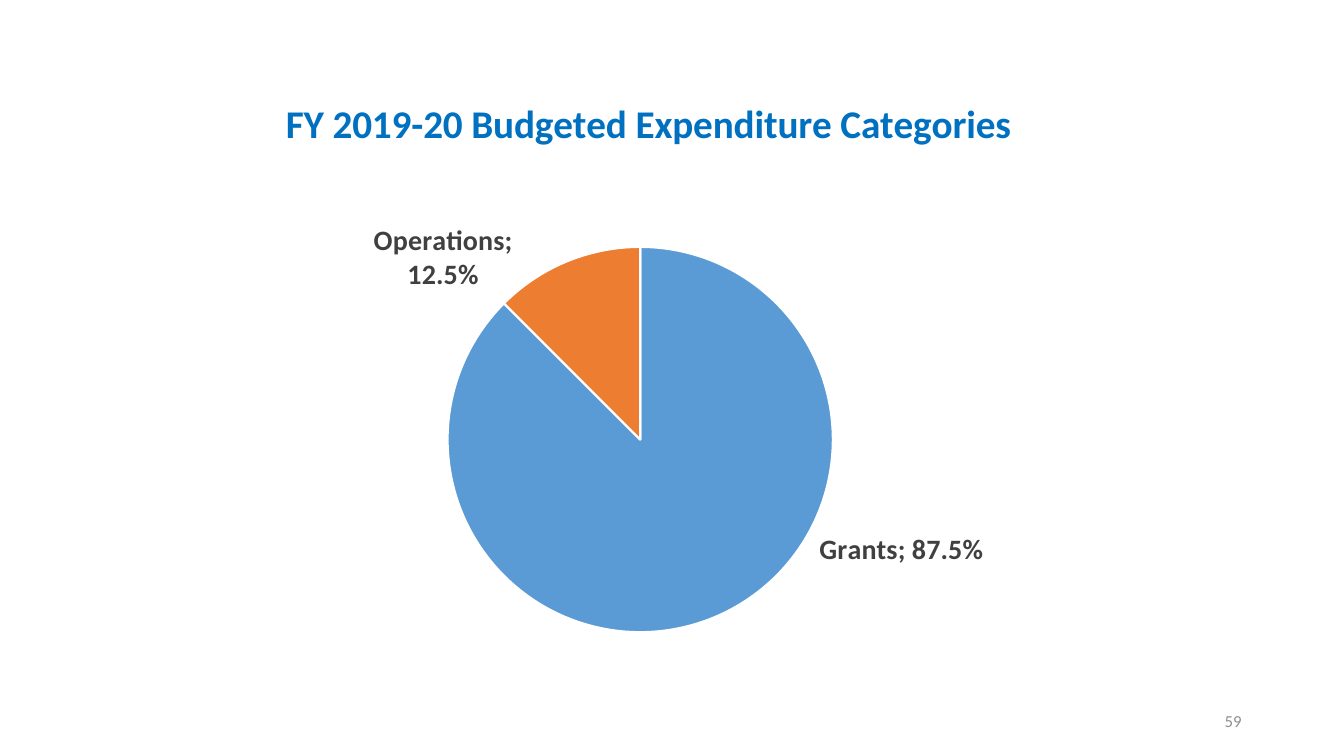
from lxml import etree
from pptx import Presentation
from pptx.chart.data import CategoryChartData
from pptx.dml.color import RGBColor
from pptx.enum import chart as ch, text
from pptx.oxml import parse_xml
from pptx.oxml.ns import nsdecls, qn
from pptx.util import Pt

FONT = "Calibri"
TITLE = "FY 2019-20 Budgeted Expenditure Categories"
# category, share, slice colour, label shift as fractions of the chart
SLICES = [
    ("Grants", 0.875, "5B9BD5", (0.1, -0.15)),
    ("Operations", 0.125, "ED7D31", (-0.05, 0.06)),
]


def rgb(value):
    return RGBColor.from_string(value)


def set_font(font, size, color, bold=False):
    font.name, font.size, font.bold = FONT, Pt(size), bold
    font.color.rgb = rgb(color)


def manual_layout(**values):
    """Return a c:layout element; keyword order follows the schema."""
    tags = "".join(f'<c:{k} val="{v}"/>' for k, v in values.items())
    return parse_xml(f'<c:layout {nsdecls("c")}><c:manualLayout>{tags}'
                     '</c:manualLayout></c:layout>')


def place_title(chart):
    tf = chart.chart_title.text_frame
    tf.text = TITLE
    set_font(tf.paragraphs[0].runs[0].font, 28, "0070C0", True)
    title = chart._chartSpace.chart.find(qn("c:title"))
    for old in title.findall(qn("c:layout")):
        title.remove(old)
    title.find(qn("c:tx")).addnext(
        manual_layout(xMode="edge", yMode="edge", x=0.14, y=0.02))
    chart.chart_title.include_in_layout = False


def place_plot(chart):
    area = chart._chartSpace.chart.plotArea
    for old in area.findall(qn("c:layout")):
        area.remove(old)
    area.insert(0, manual_layout(layoutTarget="inner", xMode="edge",
                                 yMode="edge", x=0.3, y=0.28, w=0.38, h=0.64))


def format_labels(series):
    labels = series.data_labels
    labels.show_value = labels.show_category_name = True
    labels.number_format, labels.number_format_is_linked = "0.0%", False
    labels.position = ch.XL_LABEL_POSITION.OUTSIDE_END
    set_font(labels.font, 20, "404040", True)
    dlbls = labels._element
    leader = dlbls.find(qn("c:showLeaderLines"))
    if leader is None:
        leader = etree.SubElement(dlbls, qn("c:showLeaderLines"))
    leader.set("val", "0")


def format_slice(series, index, color, shift):
    point = series.points[index]
    point.format.fill.solid()
    point.format.fill.fore_color.rgb = rgb(color)
    point.format.line.color.rgb = rgb("FFFFFF")
    point.format.line.width = Pt(1.5)

    label = point.data_label
    set_font(label.font, 20, "404040", True)
    label.position = ch.XL_LABEL_POSITION.OUTSIDE_END
    dlbl = series._element.xpath(f"c:dLbls/c:dLbl[c:idx/@val={index}]")[0]
    layout = manual_layout(x=shift[0], y=shift[1])
    dlbl.find(qn("c:idx")).addnext(layout)
    layout.addnext(parse_xml(f'<c:numFmt {nsdecls("c")} formatCode="0.0%" '
                             'sourceLinked="0"/>'))
    dlbl.find(qn("c:showCatName")).set("val", "1")
    etree.SubElement(dlbl, qn("c:separator")).text = "; "


def add_pie(slide, left, top, width, height):
    data = CategoryChartData(number_format="0.0%")
    data.categories = [name for name, *_ in SLICES]
    data.add_series("Series 1", [share for _, share, *_ in SLICES])
    chart = slide.shapes.add_chart(ch.XL_CHART_TYPE.PIE, Pt(left), Pt(top),
                                   Pt(width), Pt(height), data).chart
    chart.has_legend = False
    set_font(chart.font, 10, "000000")
    place_title(chart)
    place_plot(chart)
    series = chart.plots[0].series[0]
    format_labels(series)
    for i, (_, _, color, shift) in enumerate(SLICES):
        format_slice(series, i, color, shift)


def add_page_number(slide, number, left, top, width, height):
    sp = slide.shapes.add_textbox(Pt(left), Pt(top), Pt(width), Pt(height))
    tf = sp.text_frame
    tf.word_wrap = True
    tf.vertical_anchor = text.MSO_ANCHOR.MIDDLE
    p = tf.paragraphs[0]
    p.text = number
    p.alignment = text.PP_ALIGN.RIGHT
    set_font(p.runs[0].font, 12, "8E8E94")


def main():
    prs = Presentation()
    prs.slide_width, prs.slide_height = Pt(960), Pt(540)
    slide = prs.slides.add_slide(prs.slide_layouts[6])
    add_pie(slide, 95.75, 56, 738, 430)
    add_page_number(slide, "59", 678, 500.5, 216, 28.75)
    prs.save("out.pptx")


if __name__ == "__main__":
    main()
